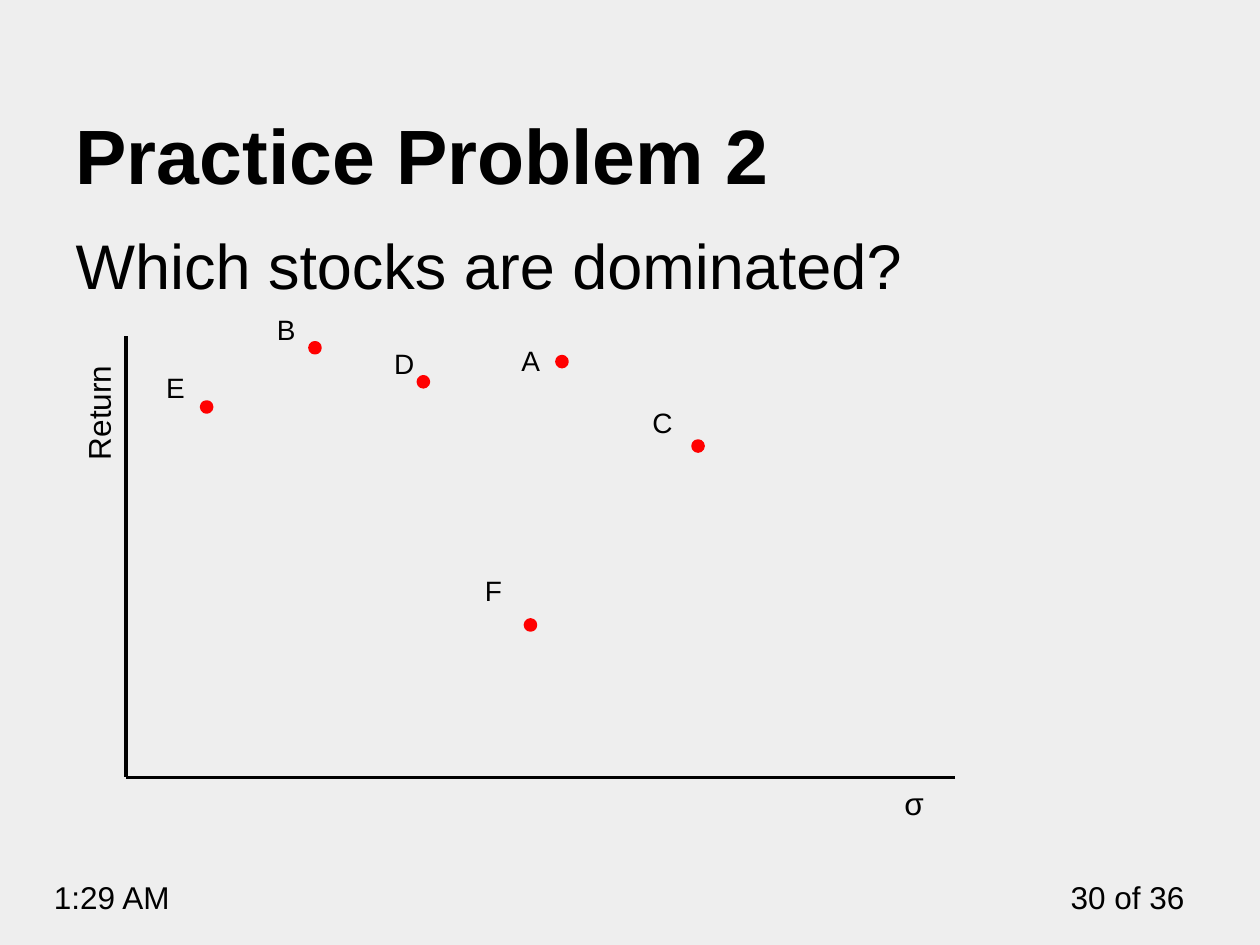
import pptx
import pptx.util
import pptx.dml.color
import pptx.enum.shapes
import pptx.enum.text
import pptx.oxml.ns
import lxml.etree

Inches = pptx.util.Inches
Pt = pptx.util.Pt
Align = pptx.enum.text.PP_ALIGN
Anchor = pptx.enum.text.MSO_ANCHOR
qn = pptx.oxml.ns.qn

colors = {"back": "EEEEEE", "ink": "000000", "dot": "FF0000"}
rgb = {name: pptx.dml.color.RGBColor.from_string(code) for name, code in colors.items()}


def write(shape, text, size, align=Align.LEFT, anchor=Anchor.TOP, bold=False):
    frame = shape.text_frame
    frame.text = text
    frame.word_wrap = True
    frame.auto_size = pptx.enum.text.MSO_AUTO_SIZE.NONE
    frame.vertical_anchor = anchor
    line = frame.paragraphs[0]
    line.alignment = align
    line.space_before = Pt(0)
    font = line.runs[0].font
    font.name = "Arial"
    font.size = Pt(size)
    font.bold = bold
    font.color.rgb = rgb["ink"]


def place(shape, left, top, width, height):
    shape.left, shape.top = Inches(left), Inches(top)
    shape.width, shape.height = Inches(width), Inches(height)


deck = pptx.Presentation()
deck.slide_width = Inches(10)
deck.slide_height = Inches(7.5)
slide = deck.slides.add_slide(deck.slide_layouts[1])
slide.background.fill.solid()
slide.background.fill.fore_color.rgb = rgb["back"]
shapes = slide.shapes

title = shapes.title
place(title, 0.5, 0.39, 9, 1.25)
write(title, "Practice Problem 2", 44, anchor=Anchor.BOTTOM, bold=True)

body = slide.placeholders[1]
place(body, 0.5, 1.75, 9, 0.75)
body.text_frame.text = ""
write(body, "Which stocks are dominated?", 36)
props = body.text_frame.paragraphs[0]._p.get_or_add_pPr()
props.set("marL", "0")
props.set("indent", "0")
lxml.etree.SubElement(props, qn("a:buNone"))

left, base = 1, 6.17
for end_x, end_y in [(left, 2.67), (7.58, base)]:
    axis = shapes.add_connector(
        pptx.enum.shapes.MSO_CONNECTOR.STRAIGHT,
        Inches(end_x), Inches(end_y), Inches(left), Inches(base))
    axis.line.color.rgb = rgb["ink"]
    axis.line.width = Pt(2)
    lxml.etree.SubElement(axis._element.spPr, qn("a:effectLst"))

labels = [
    ("30 of 36", 8.33, 6.92, 1.17, 0.4, 0, Align.RIGHT),
    ("1:29 AM", 0.33, 6.92, 1.58, 0.4, 0, Align.LEFT),
    ("σ", 7.08, 6.17, 0.5, 0.4, 0, Align.LEFT),
    ("Return", 0.25, 3, 1.08, 0.42, 270, Align.LEFT),
]
for text, x, y, width, height, turn, align in labels:
    box = shapes.add_textbox(Inches(x), Inches(y), Inches(width), Inches(height))
    box.rotation = turn
    write(box, text, 18, align)

stocks = [
    ("A", 4.42, 2.83, 4.04, 2.68),
    ("B", 2.46, 2.72, 2.1, 2.43),
    ("C", 5.5, 3.5, 5.08, 3.17),
    ("D", 3.32, 2.99, 3.03, 2.7),
    ("E", 1.6, 3.19, 1.22, 2.89),
    ("F", 4.17, 4.92, 3.75, 4.5),
]
for name, dot_x, dot_y, text_x, text_y in stocks:
    dot = shapes.add_shape(
        pptx.enum.shapes.MSO_SHAPE.OVAL,
        Inches(dot_x), Inches(dot_y), Inches(0.08), Inches(0.08))
    dot.shadow.inherit = False
    dot.fill.solid()
    dot.fill.fore_color.rgb = rgb["dot"]
    dot.line.color.rgb = rgb["dot"]
    dot.line.width = Pt(2)
    box = shapes.add_textbox(Inches(text_x), Inches(text_y), Inches(0.33), Inches(0.37))
    write(box, name, 16)

deck.save("out.pptx")
